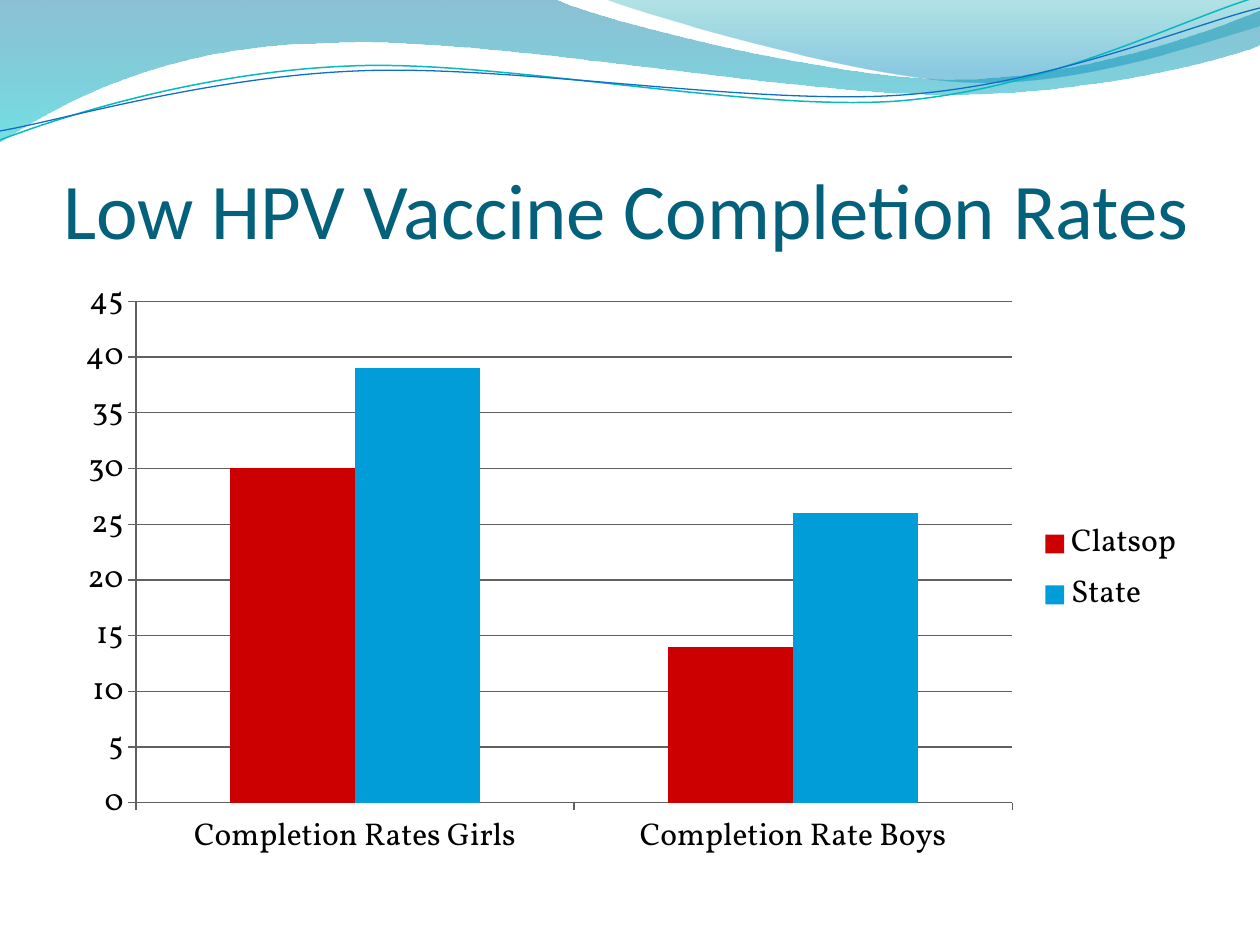
from pptx import Presentation
from pptx.chart.data import CategoryChartData
from pptx.dml.color import RGBColor
from pptx.enum.chart import XL_CHART_TYPE, XL_LEGEND_POSITION, XL_TICK_MARK
from pptx.enum.text import MSO_ANCHOR, MSO_AUTO_SIZE, PP_ALIGN
from pptx.oxml.ns import qn
from pptx.util import Pt
from lxml.etree import SubElement

SCALE = 914400 / 126
TITLE = "Low HPV Vaccine Completion Rates"
TITLE_AREA = (63, 97, 1134, 158)
CHART_AREA = (63, 267, 1134, 605)
CATEGORIES = ["Completion Rates Girls", "Completion Rate Boys"]
SERIES = [("Clatsop", (30, 14), "CC0000"), ("State", (39, 26), "009DD9")]
AXIS_COLOR = "606060"

# Each segment holds one point for a straight edge or three for a Bezier curve.
BANDS = [
    {
        "start": (0, 0),
        "segments": [
            [(554, -1)],
            [(600, 21), (837, 79), (955, 79)],
            [(1075, 79), (1207, 33), (1260, 11)],
            [(1261, 45)],
            [(1239, 55), (1096, 96), (940, 94)],
            [(784, 94), (481, 35), (324, 43)],
            [(163, 45), (58, 105), (-1, 142)],
        ],
        "stops": [(0, "0074A1", 45), (1, "00C6CF", 55)],
    },
    {
        "start": (604, -1),
        "segments": [
            [(641, 14), (859, 78), (969, 82)],
            [(1079, 87), (1211, 40), (1260, 26)],
            [(1260, 0)],
        ],
        "stops": [(0, "00A1A9", 30), (0.8, "008BBF", 45)],
    },
]
STRANDS = [
    {
        "start": (0, 140),
        "segments": [
            [(60, 117), (199, 72), (349, 66)],
            [(498, 59), (747, 112), (898, 101)],
            [(1049, 89), (1182, 19), (1257, -3)],
        ],
        "line": ("0AB8BF", 0.85),
    },
    {
        "start": (0, 131),
        "segments": [
            [(59, 121), (207, 77), (357, 71)],
            [(508, 64), (752, 106), (903, 95)],
            [(1053, 84), (1187, 26), (1260, 8)],
        ],
        "line": ("0F6FC6", 0.75),
    },
]


def px(value):
    return round(value * SCALE)


def color(value):
    return RGBColor.from_string(value)


def place(shape, area):
    shape.left, shape.top, shape.width, shape.height = map(px, area)


def add_wave(page, wave, close):
    segments = wave["segments"]
    builder = page.shapes.build_freeform(*wave["start"], scale=SCALE)
    builder.add_line_segments([point for segment in segments for point in segment], close=close)
    shape = builder.convert_to_shape()
    shape.shadow.inherit = False
    outline = next(shape._element.iter(qn("a:path")))
    edges = iter(outline.findall(qn("a:lnTo")))
    for segment in segments:
        group = [next(edges) for point in segment]
        if len(group) == 3:
            curve = SubElement(outline, qn("a:cubicBezTo"))
            group[0].addprevious(curve)
            for edge in group:
                curve.append(edge[0])
                outline.remove(edge)
    return shape


def add_band(page, band):
    shape = add_wave(page, band, True)
    shape.line.fill.background()
    shape.fill.gradient()
    shape.fill.gradient_angle = 270
    for stop, (position, value, alpha) in zip(shape.fill.gradient_stops, band["stops"]):
        stop.position = position
        stop.color.rgb = color(value)
    tints = shape._element.spPr.iter(qn("a:srgbClr"))
    for tint, (position, value, alpha) in zip(tints, band["stops"]):
        SubElement(tint, qn("a:alpha"), val=str(alpha * 1000))


def add_strand(page, strand):
    shape = add_wave(page, strand, False)
    shape.fill.background()
    value, width = strand["line"]
    shape.line.color.rgb = color(value)
    shape.line.width = Pt(width)


def format_title(page):
    title = page.shapes.title
    page.shapes._spTree.append(title._element)
    place(title, TITLE_AREA)
    frame = title.text_frame
    frame.auto_size = MSO_AUTO_SIZE.NONE
    frame.word_wrap = True
    frame.vertical_anchor = MSO_ANCHOR.BOTTOM
    frame.margin_left = frame.margin_right = frame.margin_bottom = 0
    frame.margin_top = Pt(3.6)
    para = frame.paragraphs[0]
    para.alignment = PP_ALIGN.LEFT
    span = para.add_run()
    span.text = TITLE
    span.font.name = "Calibri"
    span.font.size = Pt(45)
    span.font.color.rgb = color("04617B")


def add_rates_chart(page):
    data = CategoryChartData()
    data.categories = CATEGORIES
    for name, values, fill in SERIES:
        data.add_series(name, values)
    chart = page.shapes.add_chart(
        XL_CHART_TYPE.COLUMN_CLUSTERED, *map(px, CHART_AREA), data
    ).chart
    chart.has_title = False
    chart.font.name = "Vollkorn"
    chart.font.size = Pt(18)
    chart.font.color.rgb = color("000000")
    chart.has_legend = True
    chart.legend.position = XL_LEGEND_POSITION.RIGHT
    chart.legend.include_in_layout = False

    plot = chart.plots[0]
    plot.gap_width = 150
    plot.overlap = 0
    plot.vary_by_categories = False
    for series, (name, values, fill) in zip(plot.series, SERIES):
        series.format.fill.solid()
        series.format.fill.fore_color.rgb = color(fill)

    value_axis = chart.value_axis
    value_axis.minimum_scale = 0
    value_axis.maximum_scale = 45
    value_axis.major_unit = 5
    value_axis.has_major_gridlines = True
    for axis in (chart.category_axis, value_axis):
        axis.major_tick_mark = XL_TICK_MARK.OUTSIDE
        axis.minor_tick_mark = XL_TICK_MARK.NONE
    for part in (chart.category_axis, value_axis, value_axis.major_gridlines):
        part.format.line.color.rgb = color(AXIS_COLOR)
        part.format.line.width = Pt(0.75)


def main():
    deck = Presentation()
    deck.slide_width, deck.slide_height = px(1260), px(945)
    page = deck.slides.add_slide(deck.slide_layouts[5])
    for band in BANDS:
        add_band(page, band)
    for strand in STRANDS:
        add_strand(page, strand)
    format_title(page)
    add_rates_chart(page)
    deck.save("out.pptx")


if __name__ == "__main__":
    main()
